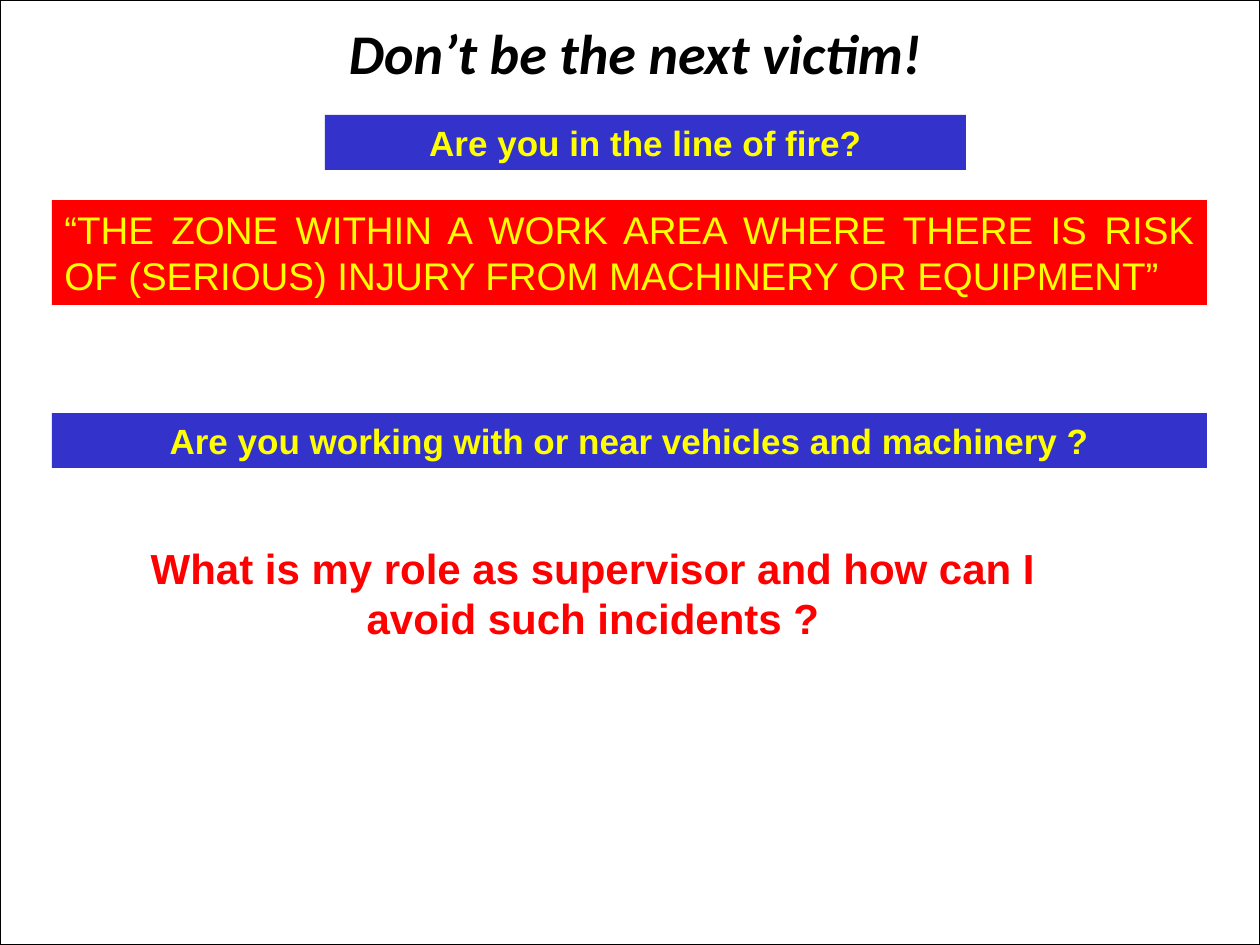
"""Build a safety slide on the line of fire around machinery."""
from dataclasses import dataclass

from pptx import Presentation
from pptx import util as u
from pptx.dml.color import RGBColor
from pptx.enum import shapes, text

PX = 914400 / 126
WIDTH, HEIGHT = 1260, 945


@dataclass(frozen=True)
class Theme:
    """Colours, fonts and type sizes of the slide."""
    white: str = "FFFFFF"
    black: str = "000000"
    blue: str = "3333CC"
    red: str = "FF0000"
    yellow: str = "FFFF00"
    title_font: str = "Calibri"
    body_font: str = "Arial"
    title_size: int = 32
    question_size: int = 20
    definition_size: int = 22
    closing_size: int = 24


THEME = Theme()


def emu(*lengths):
    """Turn px lengths into EMU."""
    return [u.Emu(round(length * PX)) for length in lengths]


def write(shape, wording, size, colour, font=THEME.body_font, bold=False,
          italic=False, align=text.PP_ALIGN.CENTER,
          anchor=text.MSO_ANCHOR.TOP):
    """Write one wrapped paragraph into a shape."""
    frame = shape.text_frame
    frame.word_wrap = True
    frame.vertical_anchor = anchor
    paragraph = frame.paragraphs[0]
    paragraph.text = wording
    paragraph.alignment = align
    paragraph.font.name = font
    paragraph.font.size = u.Pt(size)
    paragraph.font.bold = bold
    paragraph.font.italic = italic
    paragraph.font.color.rgb = RGBColor.from_string(colour)


def add_panel(slide, box, fill):
    """Add a plain filled rectangle without outline."""
    shape = slide.shapes.add_shape(shapes.MSO_SHAPE.RECTANGLE, *emu(*box))
    shape.shadow.inherit = False
    shape.fill.solid()
    shape.fill.fore_color.rgb = RGBColor.from_string(fill)
    shape.line.fill.background()
    return shape


def add_frame(slide, box):
    """Add the thin black border around the slide."""
    frame = add_panel(slide, box, THEME.white)
    frame.line.color.rgb = RGBColor.from_string(THEME.black)
    frame.line.width = u.Pt(0.75)


def add_title(slide, box):
    """Add the slide title."""
    write(slide.shapes.add_textbox(*emu(*box)), "Don’t be the next victim!",
          THEME.title_size, THEME.black, THEME.title_font, bold=True,
          italic=True, anchor=text.MSO_ANCHOR.MIDDLE)


def add_question(slide, box, wording):
    """Add a question on a blue band."""
    write(add_panel(slide, box, THEME.blue), wording,
          THEME.question_size, THEME.yellow, bold=True)


def add_definition(slide, box):
    """Add the definition of the line of fire on a red band."""
    write(add_panel(slide, box, THEME.red),
          "“THE ZONE WITHIN A WORK AREA WHERE THERE IS RISK OF (SERIOUS) "
          "INJURY FROM MACHINERY OR EQUIPMENT” ",
          THEME.definition_size, THEME.yellow, align=text.PP_ALIGN.JUSTIFY)


def add_closing(slide, box):
    """Add the closing question to supervisors."""
    write(slide.shapes.add_textbox(*emu(*box)),
          "What is my role as supervisor and how can I avoid such incidents ?",
          THEME.closing_size, THEME.red, bold=True)


def main():
    """Build and save the presentation."""
    presentation = Presentation()
    presentation.slide_width, presentation.slide_height = emu(WIDTH, HEIGHT)
    slide = presentation.slides.add_slide(presentation.slide_layouts[6])
    add_frame(slide, (0, 0, WIDTH, HEIGHT))
    add_title(slide, (42, 10, 1187, 84))
    add_question(slide, (325, 115, 641, 55), "Are you in the line of fire?")
    add_definition(slide, (52, 200, 1155, 105))
    add_question(slide, (52, 413, 1155, 55),
                 "Are you working with or near vehicles and machinery ?")
    add_closing(slide, (94, 536, 998, 114))
    presentation.save("out.pptx")


if __name__ == "__main__":
    main()
